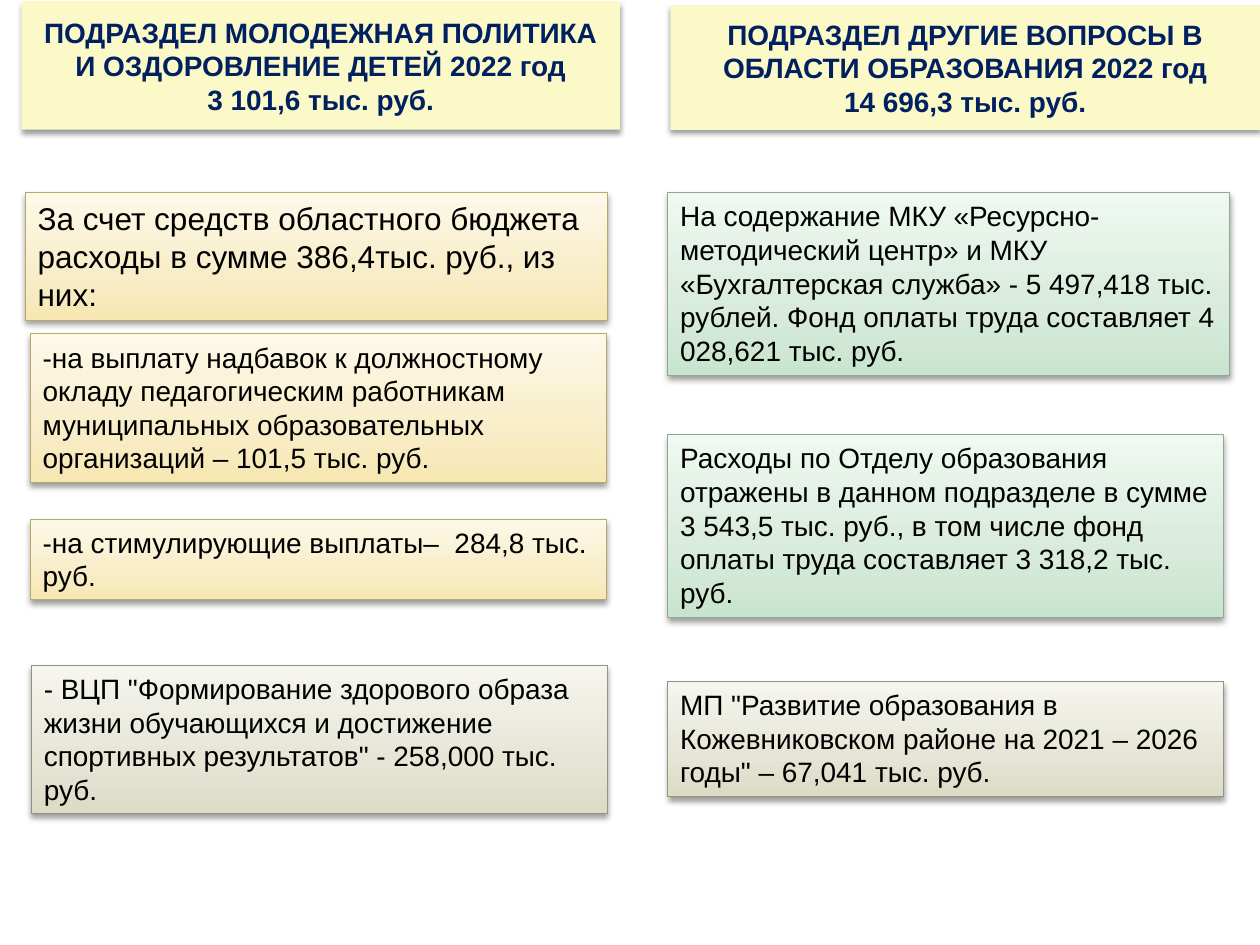
from copy import deepcopy
from dataclasses import dataclass

from pptx import Presentation
from pptx import oxml
from pptx import util as u
from pptx.dml.color import RGBColor
from pptx.enum import shapes, text
from pptx.oxml import ns


@dataclass(frozen=True)
class Theme:
    font: str = "Arial"
    heading_fill: str = "FCF9C8"
    heading_ink: str = "002060"
    ink: str = "000000"
    shadow: str = "000000"
    yellow: tuple = ("B7A86B", "F7E7B1", "F8EDC8", "FDF9E9")
    green: tuple = ("8CA993", "C8E4CE", "D8EBDC", "EFF8F1")
    olive: tuple = ("96957C", "DCDBC5", "E6E5D6", "F6F5EF")
    stops: tuple = (0, 0.35, 1)
    size: int = 16
    lead_size: int = 18


THEME = Theme()

HEADINGS = [
    ((0.17, 0.01, 4.75, 1.02),
     "ПОДРАЗДЕЛ МОЛОДЕЖНАЯ ПОЛИТИКА И ОЗДОРОВЛЕНИЕ ДЕТЕЙ 2022 год\n3 101,6 тыс. руб."),
    ((5.32, 0.04, 4.68, 0.99),
     "ПОДРАЗДЕЛ ДРУГИЕ ВОПРОСЫ В ОБЛАСТИ ОБРАЗОВАНИЯ 2022 год\n14 696,3 тыс. руб."),
]

EXPENSES = [
    ((0.2, 1.53, 4.62, 1.01), THEME.yellow, THEME.lead_size,
     "За счет средств областного бюджета расходы в сумме 386,4тыс. руб., из них:"),
    ((0.24, 2.65, 4.57, 1.18), THEME.yellow, THEME.size,
     "-на выплату надбавок к должностному окладу педагогическим работникам "
     "муниципальных образовательных организаций – 101,5 тыс. руб."),
    ((0.24, 4.12, 4.57, 0.64), THEME.yellow, THEME.size,
     "-на стимулирующие выплаты–  284,8 тыс. руб."),
    ((0.25, 5.28, 4.57, 1.18), THEME.olive, THEME.size,
     '- ВЦП "Формирование здорового образа жизни обучающихся и достижение '
     'спортивных результатов" - 258,000 тыс. руб.'),
    ((5.3, 1.53, 4.46, 1.45), THEME.green, THEME.size,
     "На содержание МКУ «Ресурсно-методический центр» и МКУ «Бухгалтерская служба» - "
     "5 497,418 тыс. рублей. Фонд оплаты труда составляет 4 028,621 тыс. руб."),
    ((5.3, 3.45, 4.41, 1.45), THEME.green, THEME.size,
     "Расходы по Отделу образования отражены в данном подразделе в сумме "
     "3 543,5 тыс. руб., в том числе фонд оплаты труда составляет 3 318,2 тыс. руб."),
    ((5.3, 5.41, 4.41, 0.91), THEME.olive, THEME.size,
     'МП "Развитие образования в Кожевниковском районе на 2021 – 2026 годы" – '
     "67,041 тыс. руб."),
]


def rgb(value):
    return RGBColor.from_string(value)


def add_shadow(panel, blur):
    panel.shadow.inherit = False
    effects = panel._element.spPr.find(ns.qn("a:effectLst"))
    effects.append(oxml.parse_xml(
        f'<a:outerShdw {ns.nsdecls("a")} blurRad="{u.Pt(blur)}" dist="{u.Pt(2)}" '
        f'dir="5400000" rotWithShape="0"><a:srgbClr val="{THEME.shadow}">'
        '<a:alpha val="38000"/></a:srgbClr></a:outerShdw>'))


def fill_gradient(panel, colors):
    panel.fill.gradient()
    panel.fill.gradient_angle = 90
    stop_list = panel._element.spPr.find(".//" + ns.qn("a:gsLst"))
    stop_list.append(deepcopy(stop_list[0]))
    for stop, position, color in zip(panel.fill.gradient_stops, THEME.stops, colors):
        stop.position = position
        stop.color.rgb = rgb(color)


def add_panel(slide, box, wording, size, ink, align, bold=False):
    panel = slide.shapes.add_shape(
        shapes.MSO_SHAPE.RECTANGLE, *(u.Inches(length) for length in box))
    frame = panel.text_frame
    frame.word_wrap = True
    frame.text = wording
    for paragraph in frame.paragraphs:
        paragraph.alignment = align
        for run in paragraph.runs:
            run.font.name = THEME.font
            run.font.size = u.Pt(size)
            run.font.bold = bold
            run.font.color.rgb = rgb(ink)
    return panel


def add_heading(slide, box, wording):
    heading = add_panel(slide, box, wording, THEME.size, THEME.heading_ink,
                        text.PP_ALIGN.CENTER, bold=True)
    heading.text_frame.vertical_anchor = text.MSO_ANCHOR.MIDDLE
    heading.fill.solid()
    heading.fill.fore_color.rgb = rgb(THEME.heading_fill)
    heading.line.fill.background()
    add_shadow(heading, 3.1)


def add_expense(slide, box, palette, size, wording):
    border, *colors = palette
    expense = add_panel(slide, box, wording, size, THEME.ink, text.PP_ALIGN.LEFT)
    expense.text_frame.vertical_anchor = text.MSO_ANCHOR.TOP
    expense.text_frame.auto_size = text.MSO_AUTO_SIZE.SHAPE_TO_FIT_TEXT
    fill_gradient(expense, colors)
    expense.line.color.rgb = rgb(border)
    expense.line.width = u.Pt(0.5)
    add_shadow(expense, 3.5)


def main():
    deck = Presentation()
    deck.slide_width, deck.slide_height = u.Inches(10), u.Inches(7.5)
    slide = deck.slides.add_slide(deck.slide_layouts[6])
    for heading in HEADINGS:
        add_heading(slide, *heading)
    for expense in EXPENSES:
        add_expense(slide, *expense)
    deck.save("out.pptx")


if __name__ == "__main__":
    main()
